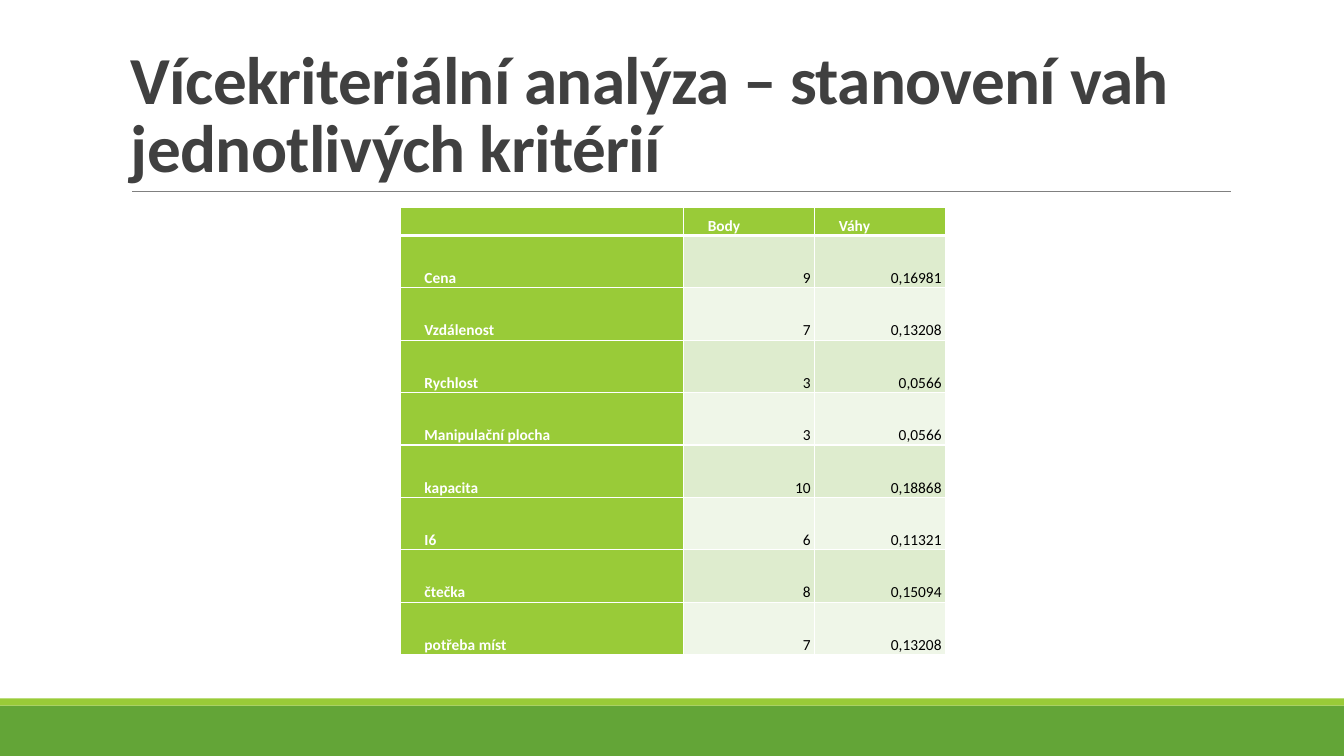
from lxml import etree
from pptx import Presentation, util as u
from pptx.dml.color import RGBColor
from pptx.enum import shapes, text
from pptx.oxml.ns import qn

WIDTH, HEIGHT = 13.33, 7.5
TITLE = "Vícekriteriální analýza – stanovení vah jednotlivých kritérií"
ROWS = [
    ("", "Body", "Váhy"),
    ("Cena", "9", "0,16981"),
    ("Vzdálenost", "7", "0,13208"),
    ("Rychlost", "3", "0,0566"),
    ("Manipulační plocha", "3", "0,0566"),
    ("kapacita", "10", "0,18868"),
    ("I6", "6", "0,11321"),
    ("čtečka", "8", "0,15094"),
    ("potřeba míst", "7", "0,13208"),
]
COLUMN_WIDTHS = (2.81, 1.3, 1.3)
HEADER_HEIGHT, ROW_HEIGHT = 0.25, 0.52
TABLE_LEFT, TABLE_TOP = 3.97, 2.06
BANDS = [(7, 0.5, "63A537"), (6.93, 0.07, "99CB38")]  # top, height, colour
LIME, WHITE, BLACK = "99CB38", "FFFFFF", "000000"
STRIPES = ("EFF6E8", "DEECCE")  # even rows, odd rows


def color(value):
    return RGBColor.from_string(value)


def write(frame, content, size, fill, bold=False, align=None, spacing=1.0,
          indent=0, tracking=0):
    """Fill the first paragraph of a frame; tracking is in points."""
    frame.word_wrap = True
    frame.vertical_anchor = text.MSO_ANCHOR.BOTTOM
    paragraph = frame.paragraphs[0]
    paragraph.alignment = align
    paragraph.line_spacing = spacing
    if indent:
        properties = paragraph._p.get_or_add_pPr()
        properties.set("marL", "0")
        properties.set("indent", str(u.Inches(indent)))
    if not content:
        end = etree.SubElement(paragraph._p, qn("a:endParaRPr"))
        end.set("sz", str(size * 100))
        return
    run = paragraph.add_run()
    run.text = content
    run.font.name, run.font.size, run.font.bold = "Calibri", u.Pt(size), bold
    run.font.color.rgb = color(fill)
    if tracking:
        run._r.get_or_add_rPr().set("spc", str(int(tracking * 100)))


def set_borders(cell, **widths):
    """White borders; widths in points keyed by side L, R, T, B."""
    properties = cell._tc.get_or_add_tcPr()
    for side, width in widths.items():
        line = etree.SubElement(properties, qn(f"a:ln{side}"), w=str(u.Pt(width)))
        solid = etree.SubElement(line, qn("a:solidFill"))
        etree.SubElement(solid, qn("a:srgbClr"), val=WHITE)


def add_band(slide, top, height, fill):
    band = slide.shapes.add_shape(shapes.MSO_SHAPE.RECTANGLE, 0, u.Inches(top),
                                  u.Inches(WIDTH), u.Inches(height))
    band.shadow.inherit = False
    band.fill.solid()
    band.fill.fore_color.rgb = color(fill)
    band.line.fill.background()


def add_rule(slide, left, right, top):
    rule = slide.shapes.add_connector(
        shapes.MSO_CONNECTOR.STRAIGHT,
        u.Inches(left), u.Inches(top), u.Inches(right), u.Inches(top))
    rule.line.color.rgb = color("808080")
    rule.line.width = u.Pt(0.5)
    etree.SubElement(rule._element.spPr, qn("a:effectLst"))


def add_weights_table(slide):
    body_height = ROW_HEIGHT * (len(ROWS) - 1)
    table = slide.shapes.add_table(
        len(ROWS), len(COLUMN_WIDTHS), u.Inches(TABLE_LEFT), u.Inches(TABLE_TOP),
        u.Inches(sum(COLUMN_WIDTHS)), u.Inches(HEADER_HEIGHT + body_height)).table
    for column, width in zip(table.columns, COLUMN_WIDTHS):
        column.width = u.Inches(width)
    for r, row in enumerate(ROWS):
        table.rows[r].height = u.Inches(ROW_HEIGHT if r else HEADER_HEIGHT)
        for c, content in enumerate(row):
            cell = table.cell(r, c)
            label = r == 0 or c == 0
            cell.margin_left = cell.margin_right = u.Inches(0.04)
            cell.margin_top = cell.margin_bottom = 0
            cell.vertical_anchor = text.MSO_ANCHOR.BOTTOM
            set_borders(cell, L=1, R=1, T=3 if r == 1 else 1, B=1 if r else 3)
            cell.fill.solid()
            cell.fill.fore_color.rgb = color(LIME if label else STRIPES[r % 2])
            write(cell.text_frame, content, 11, WHITE if label else BLACK,
                  bold=label, spacing=1.5, indent=0.2,
                  align=text.PP_ALIGN.LEFT if label else text.PP_ALIGN.RIGHT)


def main():
    presentation = Presentation()
    presentation.slide_width = u.Inches(WIDTH)
    presentation.slide_height = u.Inches(HEIGHT)
    slide = presentation.slides.add_slide(presentation.slide_layouts[6])
    for band in BANDS:
        add_band(slide, *band)
    add_rule(slide, 1.31, 12.21, 1.9)
    title = slide.shapes.add_textbox(u.Inches(1.2), u.Inches(0.31),
                                     u.Inches(11), u.Inches(1.59))
    write(title.text_frame, TITLE, 48, "404040", bold=True, spacing=0.85,
          tracking=-0.5)
    add_weights_table(slide)
    presentation.save("out.pptx")


if __name__ == "__main__":
    main()
